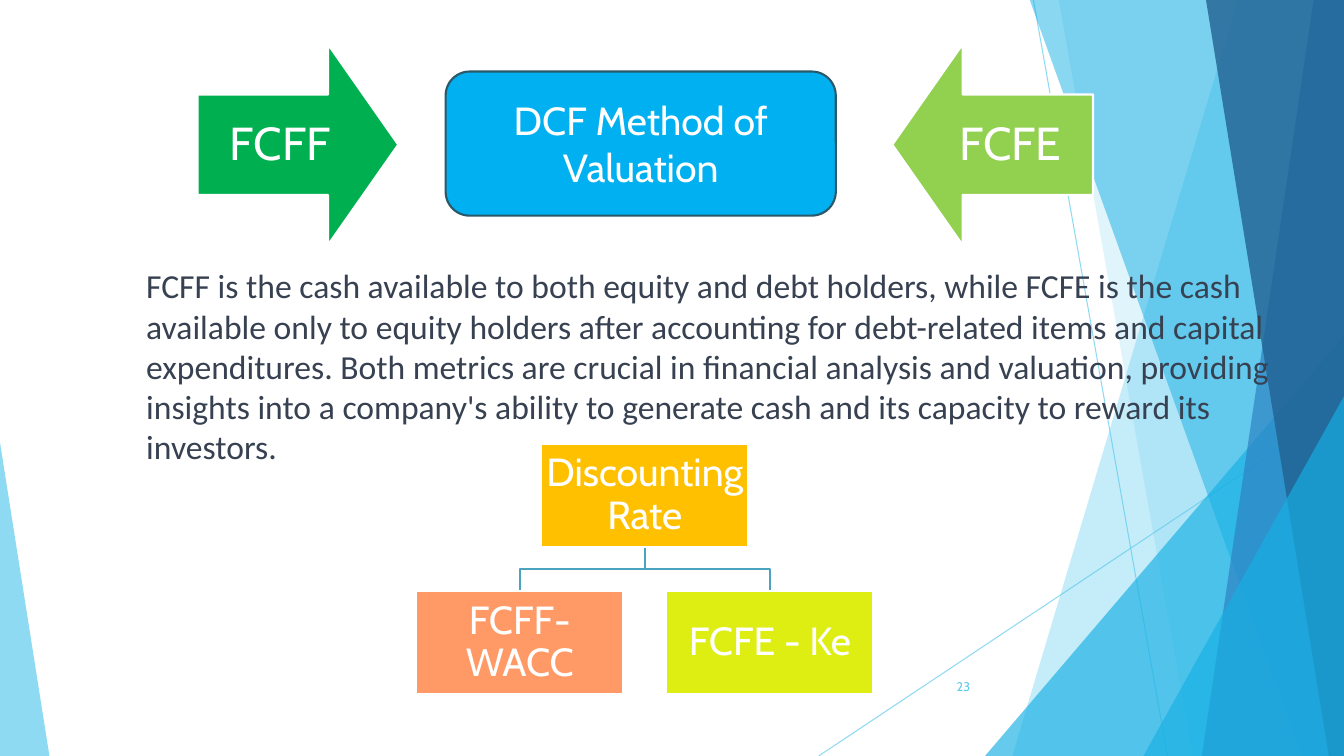
from lxml import etree
from pptx import Presentation
from pptx.dml.color import RGBColor
from pptx.enum.shapes import MSO_CONNECTOR, MSO_SHAPE
from pptx.enum.text import MSO_ANCHOR, MSO_AUTO_SIZE, PP_ALIGN
from pptx.oxml.ns import qn
from pptx.util import Inches, Pt

STRAIGHT = MSO_CONNECTOR.STRAIGHT
RECT, ROUNDED = MSO_SHAPE.RECTANGLE, MSO_SHAPE.ROUNDED_RECTANGLE
TRIANGLE, ARROW = MSO_SHAPE.ISOSCELES_TRIANGLE, MSO_SHAPE.DOWN_ARROW
LEFT, CENTER = PP_ALIGN.LEFT, PP_ALIGN.CENTER
TOP, MIDDLE = MSO_ANCHOR.TOP, MSO_ANCHOR.MIDDLE

W, H = 13.33, 7.5
WHITE = "FFFFFF"
DEFINITION = (
    "FCFF is the cash available to both equity and debt holders, while FCFE is the cash "
    "available only to equity holders after accounting for debt-related items and capital "
    "expenditures. Both metrics are crucial in financial analysis and valuation, providing "
    "insights into a company's ability to generate cash and its capacity to reward its investors."
)
BOX_W, BOX_H = 2.05, 1.03
RATE_X, RATE_Y = 5.37, 4.4
BRANCH_Y = 5.86
BRANCHES = [("FCFF- WACC", 4.13, "FF9966"), ("FCFE - Ke", 6.61, "DEEE12")]
ARROWS = [("FCFF", 1.96, 1.96, 270, "00B050"), ("FCFE", 8.85, 9.2, 90, "92D050")]
RAYS = [((10.25, 0), (11.58, H)), ((W, 4.03), (8.12, H))]
BANDS_BACK = [(12.28, 10.04, "5FCBEF", 36), (10.5, 11.83, "5FCBEF", 20)]
BANDS_FRONT = [(10.21, 12.91, "17B0E4", 50), (13.03, 11.92, "2E83C3", 70),
               (11.96, 13.18, "226292", 80)]


def rgb(color):
    return RGBColor.from_string(color)


def set_alpha(shape, percent):
    clr = shape.element.spPr.find(".//" + qn("a:srgbClr"))
    etree.SubElement(clr, qn("a:alpha")).set("val", str(percent * 1000))


def paint(shape, fill=None, line=None, width=1.5, alpha=None):
    shape.shadow.inherit = False
    if fill:
        shape.fill.solid()
        shape.fill.fore_color.rgb = rgb(fill)
    else:
        shape.fill.background()
    if line:
        shape.line.color.rgb = rgb(line)
        shape.line.width = Pt(width)
    else:
        shape.line.fill.background()
    if alpha:
        set_alpha(shape, alpha)


def write(shape, text, size, color=WHITE, font="Cabin", align=CENTER, anchor=MIDDLE,
          inset=None, spacing=None):
    tf = shape.text_frame
    frame = {"word_wrap": True, "auto_size": MSO_AUTO_SIZE.NONE, "vertical_anchor": anchor}
    if inset is not None:
        for side in ("left", "right", "top", "bottom"):
            frame["margin_" + side] = Inches(inset)
    for name, value in frame.items():
        setattr(tf, name, value)
    p = tf.paragraphs[0]
    p.alignment = align
    p.line_spacing = spacing
    r = p.add_run()
    r.text = text
    for name, value in {"name": font, "size": Pt(size)}.items():
        setattr(r.font, name, value)
    r.font.color.rgb = rgb(color)


def add_shape(s, kind, x, y, w, h, adjustments=(), **style):
    sp = s.shapes.add_shape(kind, Inches(x), Inches(y), Inches(w), Inches(h))
    for i, value in enumerate(adjustments):
        sp.adjustments[i] = value
    paint(sp, **style)
    return sp


def add_label(s, text, x, y, w, h, size, **style):
    sp = s.shapes.add_textbox(Inches(x), Inches(y), Inches(w), Inches(h))
    write(sp, text, size, **style)


def add_path(s, points, close, **style):
    corners = [(Inches(x), Inches(y)) for x, y in points]
    builder = s.shapes.build_freeform(*corners[0])
    builder.add_line_segments(corners[1:], close=close)
    paint(builder.convert_to_shape(), **style)


def add_ray(s, start, end):
    line = s.shapes.add_connector(STRAIGHT, *[Inches(v) for v in start + end])
    line.line.color.rgb = rgb("5FCBEF")
    line.line.width = Pt(0.75)
    set_alpha(line, 70)
    etree.SubElement(line.element.spPr, qn("a:effectLst"))


def add_bands(s, bands):
    for top_x, bottom_x, color, alpha in bands:
        points = [(top_x, -0.01), (W, -0.01), (W, H), (bottom_x, H)]
        add_path(s, points, True, fill=color, alpha=alpha)


def add_corner(s, x, w, h, tip, color, alpha):
    add_shape(s, TRIANGLE, x, H - h, w, h, [tip], fill=color, alpha=alpha)


def add_backdrop(s):
    for start, end in RAYS:
        add_ray(s, start, end)
    add_bands(s, BANDS_BACK)
    add_corner(s, 9.77, 3.56, 4.17, 1, "17B0E4", 66)
    add_bands(s, BANDS_FRONT)
    add_corner(s, 11.34, 1.99, 3.57, 1, "17B0E4", 66)
    add_corner(s, 0, 0.49, 3.11, 0, "5FCBEF", 70)


def add_title(s):
    title = s.shapes.title
    place = {"left": 1.35, "top": 2.58, "width": 11.42, "height": 1.99}
    for name, value in place.items():
        setattr(title, name, Inches(value))
    write(title, DEFINITION, 24, "374151", "Calibri", LEFT, TOP)
    title.element.getparent().append(title.element)


def add_node(s, text, x, y, color):
    sp = add_shape(s, RECT, x, y, BOX_W, BOX_H, fill=color, line=WHITE)
    write(sp, text, 28, inset=0.02, spacing=0.9)


def add_rate_tree(s):
    rate_mid, rate_bottom = RATE_X + BOX_W / 2, RATE_Y + BOX_H
    bend_y = (rate_bottom + BRANCH_Y) / 2
    for text, x, color in BRANCHES:
        mid = x + BOX_W / 2
        points = [(rate_mid, rate_bottom), (rate_mid, bend_y), (mid, bend_y), (mid, BRANCH_Y)]
        add_path(s, points, False, line="4CA3BF")
    add_node(s, "Discounting Rate", RATE_X, RATE_Y, "FFC000")
    for text, x, color in BRANCHES:
        add_node(s, text, x, BRANCH_Y, color)


def add_method(s):
    for text, x, label_x, rotation, color in ARROWS:
        sp = add_shape(s, ARROW, x, 0.44, 1.99, 1.99, [0.5, 0.35], fill=color, line=WHITE)
        sp.rotation = rotation
        add_label(s, text, label_x, 0.94, 1.64, 1, 33, inset=0.26, spacing=0.9)
    sp = add_shape(s, ROUNDED, 4.42, 0.71, 3.87, 1.43, fill="00B0F0", line="2A5969")
    write(sp, "DCF Method of Valuation", 28)


def main():
    prs = Presentation()
    prs.slide_width, prs.slide_height = Inches(W), Inches(H)
    s = prs.slides.add_slide(prs.slide_layouts[5])
    add_backdrop(s)
    add_title(s)
    add_label(s, "23", 9.39, 6.61, 0.75, 0.4, 9, color="5FCBEF", align=LEFT)
    add_rate_tree(s)
    add_method(s)
    prs.save("out.pptx")


if __name__ == "__main__":
    main()
